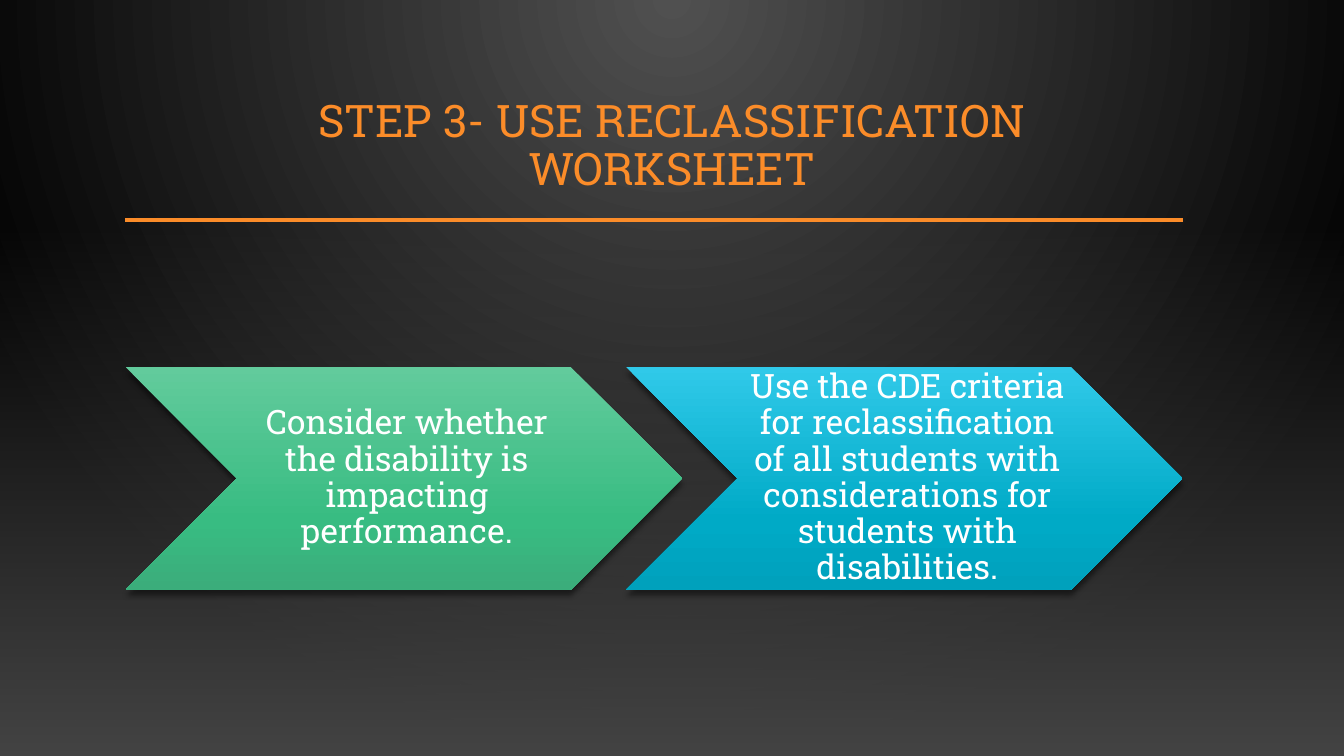
from lxml.etree import SubElement
from pptx import Presentation
from pptx.dml.color import RGBColor
from pptx.enum.shapes import MSO_CONNECTOR as Connector, MSO_SHAPE as Preset
from pptx.enum.text import MSO_ANCHOR as Anchor, PP_ALIGN as Align
from pptx.oxml import parse_xml
from pptx.oxml.ns import nsdecls, qn
from pptx.util import Cm, Pt

FONT = "Roboto Slab"
ORANGE, WHITE, GREY, BLACK = "FB8C29", "FFFFFF", "454545", "000000"
WIDTH, HEIGHT = 33.87, 19.05
BACKDROP = [(0, "505050", 100), (100, BLACK, 100)]
FLOOR = [(0, GREY, 0), (100, GREY, 100)]
SPOTLIGHT = ('<a:path path="circle"><a:fillToRect l="43000" t="0" '
             'r="43000" b="100000"/></a:path>')
DOWNWARD = '<a:lin ang="5400000" scaled="0"/>'
STEPS = [
    ("Consider whether the disability is impacting performance.",
     [(0, "62CB9C", 100), (69, "38BC82", 100), (100, "3BAD7B", 100)]),
    ("Use the CDE criteria for reclassification of all students with "
     "considerations for students with disabilities.",
     [(0, "30C9E9", 100), (69, "00AAC6", 100), (100, "00A1BC", 100)]),
]


def color(hex_value):
    """Turn a hex string into a colour."""
    return RGBColor.from_string(hex_value)


def apply_gradient(fill, properties, stops, direction=DOWNWARD):
    """Fill an element with stops of position, colour and opacity."""
    fill.solid()
    stop_xml = "".join(
        f'<a:gs pos="{position * 1000}"><a:srgbClr val="{hex_value}">'
        f'<a:alpha val="{opacity * 1000}"/></a:srgbClr></a:gs>'
        for position, hex_value, opacity in stops)
    gradient = parse_xml(
        f'<a:gradFill {nsdecls("a")} rotWithShape="1">'
        f'<a:gsLst>{stop_xml}</a:gsLst>{direction}</a:gradFill>')
    properties.replace(properties.find(qn("a:solidFill")), gradient)


def add_panel(slide, preset, box, stops, direction=DOWNWARD):
    """Add a borderless gradient shape in a box given in centimetres."""
    shape = slide.shapes.add_shape(preset, *map(Cm, box))
    shape.shadow.inherit = False
    shape.line.fill.background()
    apply_gradient(shape.fill, shape.element.spPr, stops, direction)
    return shape


def format_text(text_frame, size, hex_value):
    """Centre the text and set its font."""
    text_frame.word_wrap = True
    text_frame.vertical_anchor = Anchor.MIDDLE
    for paragraph in text_frame.paragraphs:
        paragraph.alignment = Align.CENTER
        paragraph.line_spacing = 0.9
        for run in paragraph.runs:
            run.font.name = FONT
            run.font.size = Pt(size)
            run.font.color.rgb = color(hex_value)


def add_backdrop(slide):
    """Light the slide from the top, behind everything else."""
    fill = slide.background.fill
    fill.solid()
    properties = next(slide.element.iter(qn("p:bgPr")))
    apply_gradient(fill, properties, BACKDROP, SPOTLIGHT)
    panel = add_panel(slide, Preset.RECTANGLE, (0, 0, WIDTH, HEIGHT),
                      BACKDROP, SPOTLIGHT)
    panel.element.getparent().insert(2, panel.element)


def add_heading(slide, box, text):
    """Place the title in its box."""
    title = slide.shapes.title
    title.left, title.top, title.width, title.height = map(Cm, box)
    text_frame = title.text_frame
    text_frame.text = text
    text_frame.margin_left = text_frame.margin_right = Cm(0.5)
    format_text(text_frame, 32, ORANGE)


def add_rule(slide, left, top, width):
    """Draw the line under the title."""
    rule = slide.shapes.add_connector(
        Connector.STRAIGHT, Cm(left), Cm(top), Cm(left + width), Cm(top))
    rule.line.color.rgb = color(ORANGE)
    rule.line.width = Pt(2.5)
    SubElement(rule.element.spPr, qn("a:effectLst"))


def add_shadow(shape):
    """Cast a soft shadow below a shape."""
    effects = shape.element.spPr.find(qn("a:effectLst"))
    effects.append(parse_xml(
        f'<a:outerShdw {nsdecls("a")} blurRad="50800" dist="50800" '
        f'dir="5400000" rotWithShape="0"><a:srgbClr val="{BLACK}">'
        '<a:alpha val="48000"/></a:srgbClr></a:outerShdw>'))


def add_steps(slide, box, steps):
    """Spread chevrons over the box, each overlapping the next by a tenth."""
    left, top, width, height = box
    step_width = width / (0.9 * len(steps) + 0.1)
    for index, (text, stops) in enumerate(steps):
        step_left = left + index * 0.9 * step_width
        chevron = add_panel(slide, Preset.CHEVRON,
                            (step_left, top, step_width, height), stops)
        add_shadow(chevron)
        text_frame = chevron.text_frame
        text_frame.text = text
        text_frame.margin_left = Cm(0.25)
        text_frame.margin_right = Cm(0.1)
        text_frame.margin_top = text_frame.margin_bottom = Cm(0.1)
        format_text(text_frame, 24, WHITE)


def main():
    """Build the slide and save it."""
    presentation = Presentation()
    presentation.slide_width, presentation.slide_height = Cm(WIDTH), Cm(HEIGHT)
    slide = presentation.slides.add_slide(presentation.slide_layouts[5])
    add_backdrop(slide)
    add_heading(slide, (4.04, 2.24, 25.8, 2.92),
                "STEP 3- USE RECLASSIFICATION WORKSHEET")
    add_rule(slide, 3.15, 5.54, 26.67)
    add_panel(slide, Preset.RECTANGLE, (0, 5.61, WIDTH, HEIGHT - 5.61), FLOOR)
    add_steps(slide, (3.17, 9.25, 26.63, 5.61), STEPS)
    presentation.save("out.pptx")


if __name__ == "__main__":
    main()
